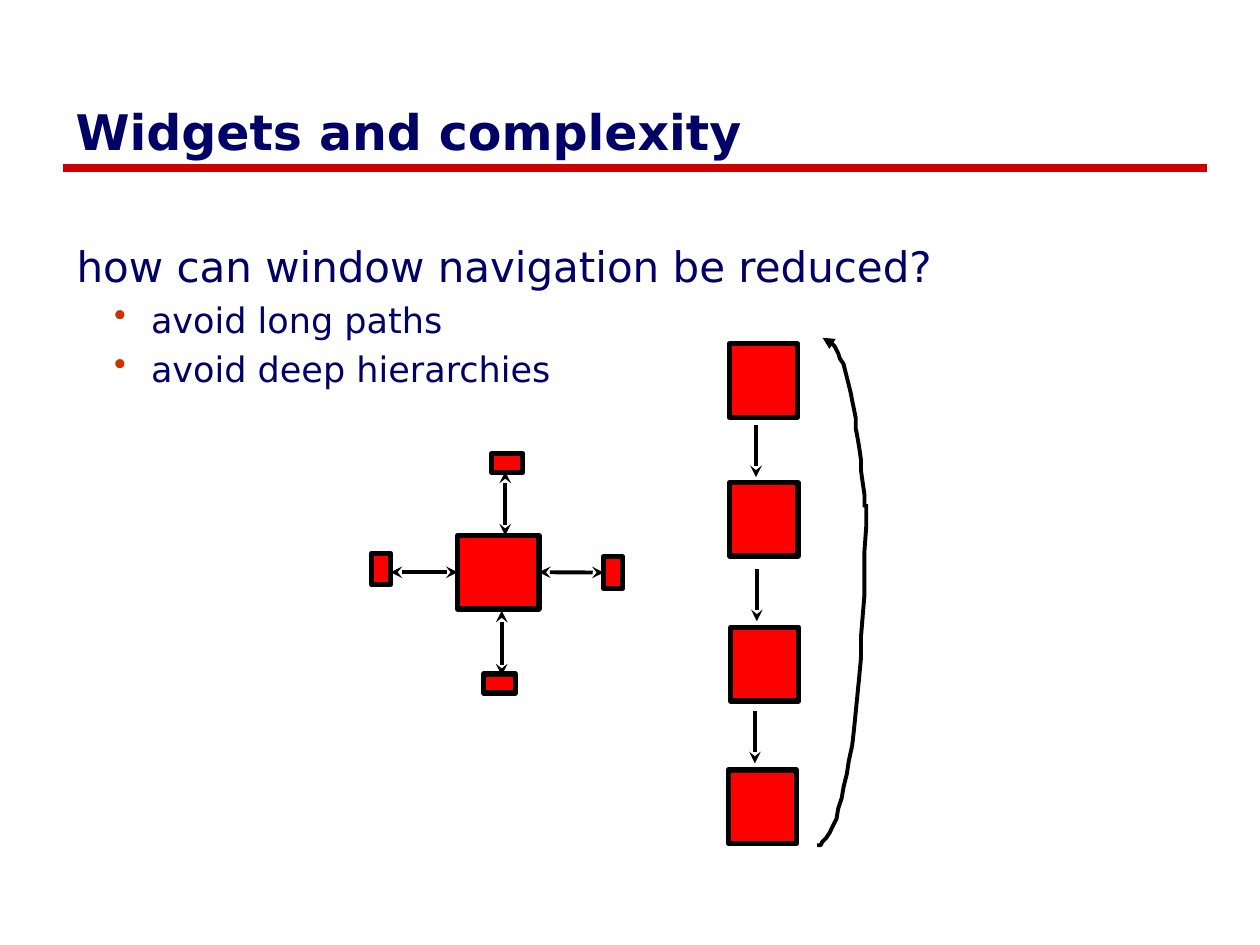
from pptx import Presentation
from pptx.dml.color import RGBColor
from pptx.enum.shapes import MSO_CONNECTOR, MSO_SHAPE
from pptx.enum.text import MSO_ANCHOR, MSO_AUTO_SIZE, PP_ALIGN
from pptx.oxml.ns import qn
from pptx.util import Pt
from lxml.etree import SubElement

NAVY, RED, BLACK = "000066", "FF0000", "000000"
RULE, BULLET = "CC0000", "CC3300"


def color(hex_string):
    return RGBColor.from_string(hex_string)


class SlideBuilder:
    """Holds the style and the current slide; all lengths are points."""
    font = "DejaVu Sans"
    box_line = 3
    arrow_line = 2.25

    def __init__(self, prs):
        self.s = prs.slides.add_slide(prs.slide_layouts[5])

    def run(self, p, text, size, bold=False):
        r = p.add_run()
        r.text = text
        r.font.name, r.font.size, r.font.bold = self.font, Pt(size), bold
        r.font.color.rgb = color(NAVY)

    def title(self, text, x, y, w, h):
        sp = self.s.shapes.title
        sp.left, sp.top, sp.width, sp.height = Pt(x), Pt(y), Pt(w), Pt(h)
        tf = sp.text_frame
        tf.auto_size = MSO_AUTO_SIZE.NONE
        tf.vertical_anchor = MSO_ANCHOR.MIDDLE
        p = tf.paragraphs[0]
        p.alignment = PP_ALIGN.LEFT
        self.run(p, text, 28, bold=True)

    def body(self, heading, bullets, x, y, w, h):
        tf = self.s.shapes.add_textbox(Pt(x), Pt(y), Pt(w), Pt(h)).text_frame
        tf.word_wrap = True
        p = tf.paragraphs[0]
        p.space_before = Pt(4.8)
        self.run(p, heading, 24)
        for text in bullets:
            p = tf.add_paragraph()
            p.level = 1
            p.space_before = Pt(4)
            self.bullet(p)
            self.run(p, text, 20)

    def bullet(self, p):
        pPr = p._p.get_or_add_pPr()
        pPr.set("marL", str(Pt(42.5)))
        pPr.set("indent", str(Pt(-21)))
        SubElement(SubElement(pPr, qn("a:buClr")), qn("a:srgbClr"), val=BULLET)
        SubElement(pPr, qn("a:buChar"), char="•")

    def box(self, x, y, w, h):
        sp = self.s.shapes.add_shape(MSO_SHAPE.RECTANGLE, Pt(x), Pt(y), Pt(w), Pt(h))
        sp.shadow.inherit = False
        sp.fill.solid()
        sp.fill.fore_color.rgb = color(RED)
        sp.line.color.rgb = color(BLACK)
        sp.line.width = Pt(self.box_line)
        return sp

    def line(self, x1, y1, x2, y2, hex_string=BLACK, width=arrow_line, head=None, tail=None):
        c = self.s.shapes.add_connector(MSO_CONNECTOR.STRAIGHT, Pt(x1), Pt(y1), Pt(x2), Pt(y2))
        c.line.color.rgb = color(hex_string)
        c.line.width = Pt(width)
        self.ends(c, head, tail)
        SubElement(c._element.spPr, qn("a:effectLst"))
        return c

    def ends(self, shape, head=None, tail=None):
        ln = shape.line._get_or_add_ln()
        for tag, kind in (("a:headEnd", head), ("a:tailEnd", tail)):
            if kind:
                SubElement(ln, qn(tag), type=kind)

    def curve(self, p0, p1, p2, p3, head=None, steps=24):
        points = []
        for i in range(steps + 1):
            t = i / steps
            u = 1 - t
            points.append(tuple(
                u**3 * a + 3 * u * u * t * b + 3 * u * t * t * c + t**3 * d
                for a, b, c, d in zip(p0, p1, p2, p3)))
        fb = self.s.shapes.build_freeform(*points[0], scale=Pt(1))
        fb.add_line_segments(points[1:], close=False)
        sp = fb.convert_to_shape()
        sp.shadow.inherit = False
        sp.fill.background()
        sp.line.color.rgb = color(BLACK)
        sp.line.width = Pt(self.arrow_line)
        self.ends(sp, head)


def main():
    prs = Presentation()
    prs.slide_width, prs.slide_height = Pt(720), Pt(540)
    b = SlideBuilder(prs)

    # Title and rule
    b.line(36, 96, 690, 96, RULE, 4.5)
    b.title("Widgets and complexity", 36, 54, 654, 42)

    # Question and answers
    b.body("how can window navigation be reduced?",
           ["avoid long paths", "avoid deep hierarchies"], 36.7, 134, 652.5, 374.5)

    # Long path: a column of windows with arrows down
    for x, y in ((416.8, 196.5), (417, 275.8), (417.5, 358.6), (416.2, 440)):
        b.box(x, y, 39, 42)
    for x, y in ((432, 242.7), (432.5, 325), (431.4, 406.2)):
        b.line(x, y, x, y + 30, tail="stealth")

    # Way back from the last window to the first
    b.curve((470.2, 193), (481, 193), (490.3, 231.8), (494, 290.2), head="triangle")
    b.curve((494.6, 288), (494.6, 396), (482.4, 483), (466.6, 483))

    # Flat hierarchy: a hub with four small windows
    hub = b.box(261.5, 306, 46.5, 42)
    right = b.box(345, 318.2, 10.8, 18)
    b.box(212.4, 316.2, 10.8, 18)
    b.box(280.8, 259.2, 18, 10.8)
    b.box(276.5, 385.2, 18, 10.8)
    both = {"head": "stealth", "tail": "stealth"}
    to_right = b.line(345, 327, 308, 327, **both)
    to_right.begin_connect(right, 1)
    to_right.end_connect(hub, 3)
    to_left = b.line(223.2, 327, 261.5, 327, **both)
    to_left.end_connect(hub, 1)
    b.line(288.7, 269.5, 288.7, 306, **both)
    b.line(286.7, 386, 286.7, 349, **both)

    prs.save("out.pptx")


if __name__ == "__main__":
    main()
